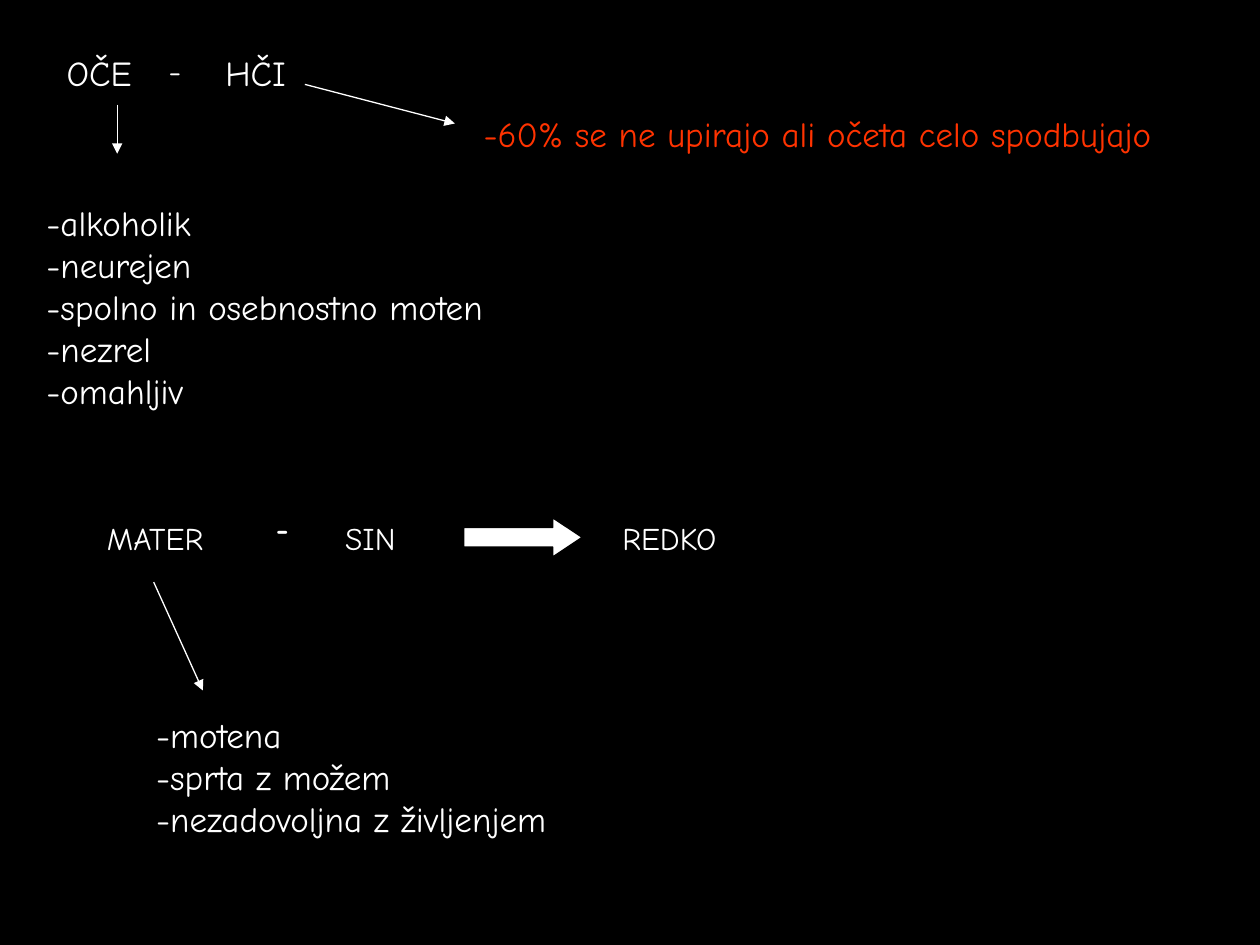
from lxml import etree
from pptx import Presentation
from pptx.dml.color import RGBColor
from pptx.enum import shapes, text
from pptx.oxml.ns import qn
from pptx.util import Inches, Pt

COLORS = {"background": "000000", "main": "FFFFFF", "accent": "FF3300"}
FONT = "Comic Neue"


class SlideBuilder:
    def __init__(self, slide):
        self.s = slide
        fill = slide.background.fill
        fill.solid()
        fill.fore_color.rgb = self.color("background")

    def color(self, name):
        return RGBColor.from_string(COLORS[name])

    def label(self, lines, x, y, w, h, size=20, color="main", bold=False):
        """Add a text box with one paragraph for each line."""
        sp = self.s.shapes.add_textbox(Inches(x), Inches(y), Inches(w), Inches(h))
        tf = sp.text_frame
        tf.text = "\n".join(lines)
        tf.word_wrap = False
        tf.auto_size = text.MSO_AUTO_SIZE.SHAPE_TO_FIT_TEXT
        for p in tf.paragraphs:
            for r in p.runs:
                r.font.name = FONT
                r.font.size = Pt(size)
                r.font.bold = bold
                r.font.color.rgb = self.color(color)

    def arrow(self, x1, y1, x2, y2):
        line = self.s.shapes.add_connector(
            shapes.MSO_CONNECTOR.STRAIGHT,
            Inches(x1), Inches(y1), Inches(x2), Inches(y2))
        line.line.color.rgb = self.color("main")
        line.line.width = Pt(0.75)
        etree.SubElement(line.line._get_or_add_ln(), qn("a:tailEnd"), type="triangle")
        etree.SubElement(line._element.spPr, qn("a:effectLst"))

    def block_arrow(self, x, y, w, h):
        sp = self.s.shapes.add_shape(
            shapes.MSO_SHAPE.RIGHT_ARROW, Inches(x), Inches(y), Inches(w), Inches(h))
        sp.adjustments[0] = 0.5
        sp.adjustments[1] = 0.75
        sp.shadow.inherit = False
        sp.fill.solid()
        sp.fill.fore_color.rgb = self.color("main")
        sp.line.color.rgb = self.color("background")
        sp.line.width = Pt(0.75)


def main():
    prs = Presentation()
    prs.slide_width, prs.slide_height = Inches(10), Inches(7.5)
    b = SlideBuilder(prs.slides.add_slide(prs.slide_layouts[6]))

    # Mother and son
    b.label(["MATER"], 0.75, 4.07, 1.09, 0.4, size=18)
    b.label(["-"], 2.09, 3.99, 0.35, 0.4, size=18, bold=True)
    b.label(["SIN"], 2.64, 4.07, 0.71, 0.4, size=18)
    b.block_arrow(3.68, 4.11, 0.94, 0.31)
    b.label(["REDKO"], 4.84, 4.07, 1.05, 0.4, size=18)
    b.label(["-motena", "-sprta z možem", "-nezadovoljna z življenjem"],
            1.14, 5.61, 3.62, 1.1)

    # Father and daughter
    b.label(["OČE"], 0.43, 0.36, 0.76, 0.43)
    b.label(["-"], 1.24, 0.36, 0.31, 0.4, size=18)
    b.label(["HČI"], 1.69, 0.36, 0.73, 0.43)
    b.label(["-alkoholik", "-neurejen", "-spolno in osebnostno moten",
             "-nezrel", "-omahljiv"], 0.27, 1.55, 3.83, 1.77)
    b.label(["-60% se ne upirajo ali očeta celo spodbujajo"],
            3.74, 0.84, 5.93, 0.43, color="accent")

    b.arrow(2.42, 0.67, 3.61, 0.98)
    b.arrow(0.93, 0.83, 0.93, 1.22)
    b.arrow(1.22, 4.62, 1.61, 5.48)

    prs.save("out.pptx")


if __name__ == "__main__":
    main()
